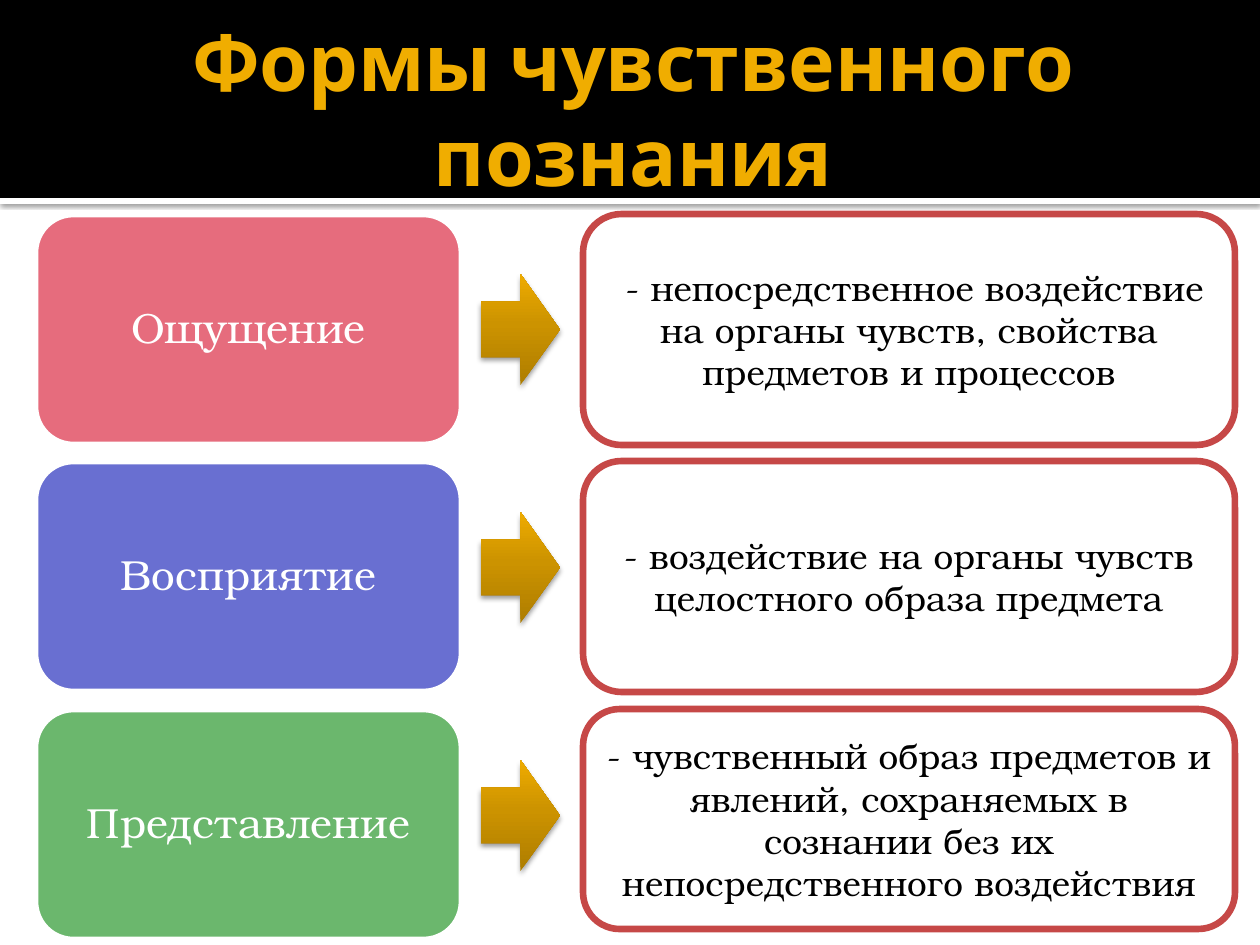
from lxml.etree import SubElement
from pptx import Presentation
from pptx.dml.color import RGBColor
from pptx.enum.shapes import MSO_SHAPE as Shape
from pptx.enum.text import MSO_ANCHOR as Anchor, PP_ALIGN as Align
from pptx.oxml.ns import qn
from pptx.util import Emu, Pt

COLORS = {
    "white": "FFFFFF", "black": "000000", "gold": "F0AD00",
    "rose": "E66C7D", "violet": "696FD1", "green": "6BB76D", "frame": "C64847",
}
ARROW_STOPS = [(0, "AE7D00"), (55, "CC9300"), (100, "EEAB00")]


def px(length):
    return Emu(round(length * 914400 / 126))


class SlideBuilder:
    title_font, body_font = "Cabin", "TeX Gyre Bonum"
    line_width = Pt(3.78)

    def __init__(self, slide):
        self.slide = slide

    def color(self, name):
        return RGBColor.from_string(COLORS[name])

    def set_text(self, shape, text, size, color, font, bold=False, spacing=1.0):
        frame = shape.text_frame
        frame.text = text
        frame.word_wrap = True
        frame.vertical_anchor = Anchor.MIDDLE
        paragraph = frame.paragraphs[0]
        paragraph.alignment = Align.CENTER
        paragraph.line_spacing = spacing
        run_font = paragraph.runs[0].font
        run_font.name, run_font.size, run_font.bold = font, Pt(size), bold
        run_font.color.rgb = self.color(color)

    def shape(self, kind, box, fill=None, line=None):
        shape = self.slide.shapes.add_shape(kind, *map(px, box))
        shape.shadow.inherit = False
        if fill:
            shape.fill.solid()
            shape.fill.fore_color.rgb = self.color(fill)
        if line:
            shape.line.color.rgb = self.color(line)
            shape.line.width = self.line_width
        else:
            shape.line.fill.background()
        return shape

    def add_shadow(self, shape, opacity, blur, distance):
        effects = shape._element.spPr.find(qn("a:effectLst"))
        shadow = SubElement(effects, qn("a:outerShdw"), blurRad=str(Pt(blur)),
                            dist=str(Pt(distance)), dir="5400000", rotWithShape="0")
        color = SubElement(shadow, qn("a:srgbClr"), val=COLORS["black"])
        SubElement(color, qn("a:alpha"), val=str(opacity * 1000))

    def title(self, text, box):
        title = self.slide.shapes.title
        title.left, title.top, title.width, title.height = map(px, box)
        self.set_text(title, text, 45, "gold", self.title_font, bold=True)
        frame = title.text_frame
        frame.margin_left = Pt(7.2)
        frame.margin_right = frame.margin_top = frame.margin_bottom = Pt(3.6)
        # Bring the title in front of the header band
        self.slide.shapes._spTree.append(title._element)

    def card(self, text, box, size, fill, line, text_color, spacing=1.0):
        card = self.shape(Shape.ROUNDED_RECTANGLE, box, fill, line)
        self.set_text(card, text, size, text_color, self.body_font, spacing=spacing)

    def arrow(self, box):
        arrow = self.shape(Shape.RIGHT_ARROW, box)
        arrow.fill.gradient()
        gradient = arrow._element.spPr.find(qn("a:gradFill"))
        stops = gradient.find(qn("a:gsLst"))
        for stop in list(stops):
            stops.remove(stop)
        for position, value in ARROW_STOPS:
            stop = SubElement(stops, qn("a:gs"), pos=str(position * 1000))
            SubElement(stop, qn("a:srgbClr"), val=value)
        arrow.fill.gradient_angle = 90
        self.add_shadow(arrow, 38, 3.1, 2)


# Term, its colour, its meaning, row top, arrow top, meaning height
ROWS = [
    ("Ощущение", "rose", " - непосредственное воздействие на органы чувств, "
     "свойства предметов и процессов", 214, 274, 231),
    ("Восприятие", "violet", "- воздействие на органы чувств целостного образа "
     "предмета", 461, 512, 231),
    ("Представление", "green", "- чувственный образ предметов и явлений, "
     "сохраняемых в сознании без их непосредственного воздействия", 709, 760, 220),
]


def main():
    presentation = Presentation()
    presentation.slide_width, presentation.slide_height = px(1260), px(945)
    slide = presentation.slides.add_slide(presentation.slide_layouts[5])
    builder = SlideBuilder(slide)

    # Header
    rule = builder.shape(Shape.RECTANGLE, (0, 198, 1260, 6), "white")
    builder.add_shadow(rule, 60, 2.5, 0.8)
    builder.shape(Shape.RECTANGLE, (0, 0, 1260, 198), "black")
    builder.title("Формы чувственного познания", (63, 21, 1134, 173))

    # Terms, arrows and meanings
    for term, fill, meaning, top, arrow_top, height in ROWS:
        builder.card(term, (35, top, 427, 231), 24, fill, "white", "white", spacing=0.9)
        builder.arrow((481, arrow_top, 79, 111))
        builder.card(meaning, (583, top, 652, height), 20, "white", "frame", "black")

    presentation.save("out.pptx")


if __name__ == "__main__":
    main()
